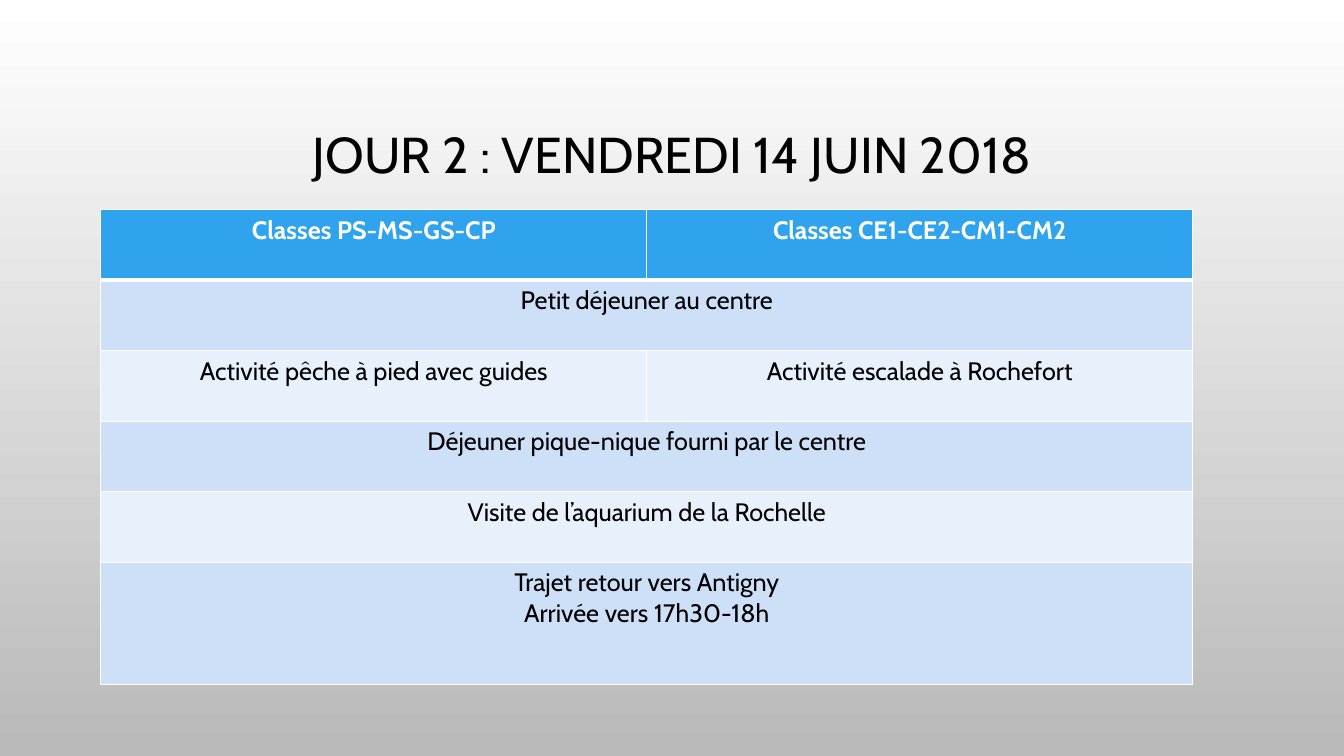
from dataclasses import dataclass

from lxml.etree import SubElement
from pptx import Presentation
from pptx.dml.color import RGBColor
from pptx.enum.text import MSO_ANCHOR, PP_ALIGN
from pptx.oxml.ns import qn
from pptx.util import Inches, Pt


@dataclass(frozen=True)
class Theme:
    font: str = "Cabin"
    title: int = 36
    body: int = 18
    ink: str = "000000"
    light: str = "FFFFFF"
    shade: str = "B9B9B9"
    head: str = "2FA3EE"
    bands: tuple = ("CDE0F8", "E8F0FC")


theme = Theme()


def write(frame, lines, size, color, bold=False):
    """Fill a text frame with centred lines, one paragraph each."""
    for i, line in enumerate(lines):
        para = frame.paragraphs[0] if i == 0 else frame.add_paragraph()
        para.alignment = PP_ALIGN.CENTER
        run = para.add_run()
        run.text = line
        run.font.name = theme.font
        run.font.size = Pt(size)
        run.font.bold = bold
        run.font.color.rgb = RGBColor.from_string(color)


def edge(cell, sides):
    """Draw cell borders, given as tag and width in points, in schema order."""
    props = cell._tc.get_or_add_tcPr()
    for i, (tag, width) in enumerate(sides.items()):
        line = SubElement(props, qn(f"a:{tag}"), w=str(Pt(width)))
        paint = SubElement(line, qn("a:solidFill"))
        SubElement(paint, qn("a:srgbClr"), val=theme.light)
        props.insert(i, line)


deck = Presentation()
deck.slide_width, deck.slide_height = Inches(13.33), Inches(7.5)
slide = deck.slides.add_slide(deck.slide_layouts[6])

# Background
fill = slide.background.fill
fill.gradient()
fill.gradient_angle = 270
for stop, color in zip(fill.gradient_stops, (theme.light, theme.shade)):
    stop.color.rgb = RGBColor.from_string(color)

# Title
box = slide.shapes.add_textbox(Inches(1), Inches(0.68), Inches(11.33), Inches(1.75))
frame = box.text_frame
frame.word_wrap = True
frame.vertical_anchor = MSO_ANCHOR.MIDDLE
write(frame, ["JOUR 2 : VENDREDI 14 JUIN 2018"], theme.title, theme.ink)
frame.paragraphs[0].line_spacing = 0.9

# Timetable: a row with one entry spans both columns
plan = [
    ["Classes PS-MS-GS-CP", "Classes CE1-CE2-CM1-CM2"],
    ["Petit déjeuner au centre"],
    ["Activité pêche à pied avec guides", "Activité escalade à Rochefort"],
    ["Déjeuner pique-nique fourni par le centre"],
    ["Visite de l’aquarium de la Rochelle"],
    ["Trajet retour vers Antigny\nArrivée vers 17h30-18h"],
]
heights = [0.7] * 5 + [1.21]
grid = slide.shapes.add_table(
    len(plan), 2, Inches(1), Inches(2.08), Inches(10.83), Inches(sum(heights))
).table

for r, (texts, height) in enumerate(zip(plan, heights)):
    grid.rows[r].height = Inches(height)
    top = r == 0
    if len(texts) == 1:
        grid.cell(r, 0).merge(grid.cell(r, 1))
    for cell in grid.rows[r].cells:
        cell.fill.solid()
        cell.fill.fore_color.rgb = RGBColor.from_string(
            theme.head if top else theme.bands[(r - 1) % 2]
        )
        if top:
            edge(cell, {"lnL": 1, "lnR": 1, "lnT": 1, "lnB": 3})
    for c, text in enumerate(texts):
        write(
            grid.cell(r, c).text_frame, text.split("\n"),
            theme.body, theme.light if top else theme.ink, top,
        )

deck.save("out.pptx")
